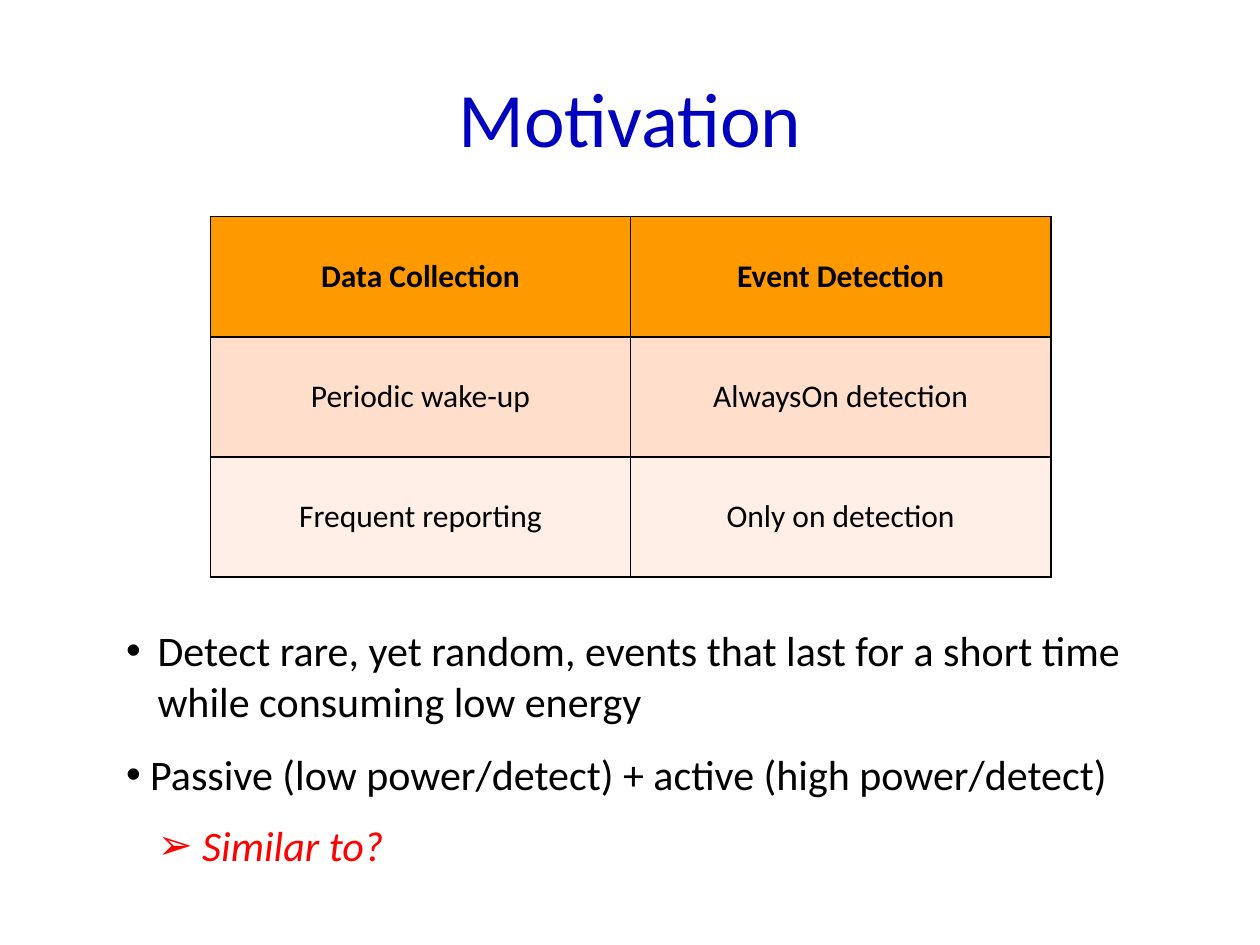
from lxml import etree
from pptx import Presentation
from pptx.dml.color import RGBColor
from pptx.enum.text import MSO_ANCHOR, MSO_AUTO_SIZE, PP_ALIGN
from pptx.oxml.ns import qn
from pptx.util import Inches, Pt

CENTER = PP_ALIGN.CENTER
MIDDLE = MSO_ANCHOR.MIDDLE
TOP = MSO_ANCHOR.TOP
GROW = MSO_AUTO_SIZE.SHAPE_TO_FIT_TEXT
FONT = "Calibri"
BLACK = "000000"

ROWS = [
    ("Data Collection", "Event Detection"),
    ("Periodic wake-up", "AlwaysOn detection"),
    ("Frequent reporting", "Only on detection"),
]
ROW_FILLS = ["FF9900", "FFDECC", "FFEFE7"]

BULLETS = [
    {"text": "Detect rare, yet random, events that last for a short time "
             "while consuming low energy",
     "margin": 0.25, "indent": -0.25},
    {"text": " Passive (low power/detect) + active (high power/detect)",
     "before": 13},
    {"text": " Similar to?", "level": 1, "margin": 0.25, "before": 12,
     "bullet": "➢", "color": "FF0000", "italic": True},
]


def rgb(value):
    return RGBColor.from_string(value)


def write(paragraph, text, size, color=BLACK, **formats):
    run = paragraph.add_run()
    run.text = text
    values = {"name": FONT, "size": Pt(size), **formats}
    for name, value in values.items():
        setattr(run.font, name, value)
    run.font.color.rgb = rgb(color)


def place(shape, box):
    for name, value in zip(("left", "top", "width", "height"), box):
        setattr(shape, name, Inches(value))


def add_borders(cell, color=BLACK, width=1):
    properties = cell._tc.get_or_add_tcPr()
    for side in ("a:lnL", "a:lnR", "a:lnT", "a:lnB"):
        line = etree.SubElement(properties, qn(side), w=str(Pt(width)))
        fill = etree.SubElement(line, qn("a:solidFill"))
        etree.SubElement(fill, qn("a:srgbClr"), val=color)


def add_bullet(paragraph, character, margin, indent):
    properties = paragraph._p.get_or_add_pPr()
    properties.set("marL", str(Inches(margin)))
    properties.set("indent", str(Inches(indent)))
    etree.SubElement(properties, qn("a:buFont"), typeface="Arial")
    etree.SubElement(properties, qn("a:buChar"), char=character)


def build_title(shape, box):
    place(shape, box)
    shape.text_frame.vertical_anchor = MIDDLE
    paragraph = shape.text_frame.paragraphs[0]
    paragraph.alignment = CENTER
    write(paragraph, "Motivation", 44, "0000BF")


def build_table(slide, box):
    frame = slide.shapes.add_table(len(ROWS), len(ROWS[0]),
                                   *(Inches(value) for value in box))
    for row_index, (texts, fill) in enumerate(zip(ROWS, ROW_FILLS)):
        for column_index, text in enumerate(texts):
            cell = frame.table.cell(row_index, column_index)
            add_borders(cell)
            cell.fill.solid()
            cell.fill.fore_color.rgb = rgb(fill)
            cell.vertical_anchor = MIDDLE
            paragraph = cell.text_frame.paragraphs[0]
            paragraph.alignment = CENTER
            write(paragraph, text, 18, bold=row_index == 0)


def build_bullets(shape, box):
    place(shape, box)
    text_frame = shape.text_frame
    text_frame.word_wrap = True
    text_frame.auto_size = GROW
    text_frame.vertical_anchor = TOP
    for index, item in enumerate(BULLETS):
        paragraph = (text_frame.add_paragraph() if index
                     else text_frame.paragraphs[0])
        paragraph.level = item.get("level", 0)
        paragraph.space_before = Pt(item.get("before", 0))
        add_bullet(paragraph, item.get("bullet", "•"),
                   item.get("margin", 0), item.get("indent", 0))
        write(paragraph, item["text"], 24, item.get("color", BLACK),
              italic=item.get("italic", False))


def main():
    presentation = Presentation()
    presentation.slide_width = Inches(10)
    presentation.slide_height = Inches(7.5)
    slide = presentation.slides.add_slide(presentation.slide_layouts[1])

    # Title
    build_title(slide.shapes.title, (0.5, 0.3, 9, 1.25))
    # Comparison table
    build_table(slide, (1.67, 1.72, 6.67, 2.86))
    # Bullet list
    build_bullets(slide.placeholders[1], (0.9, 4.91, 8.56, 2.09))

    presentation.save("out.pptx")


if __name__ == "__main__":
    main()
